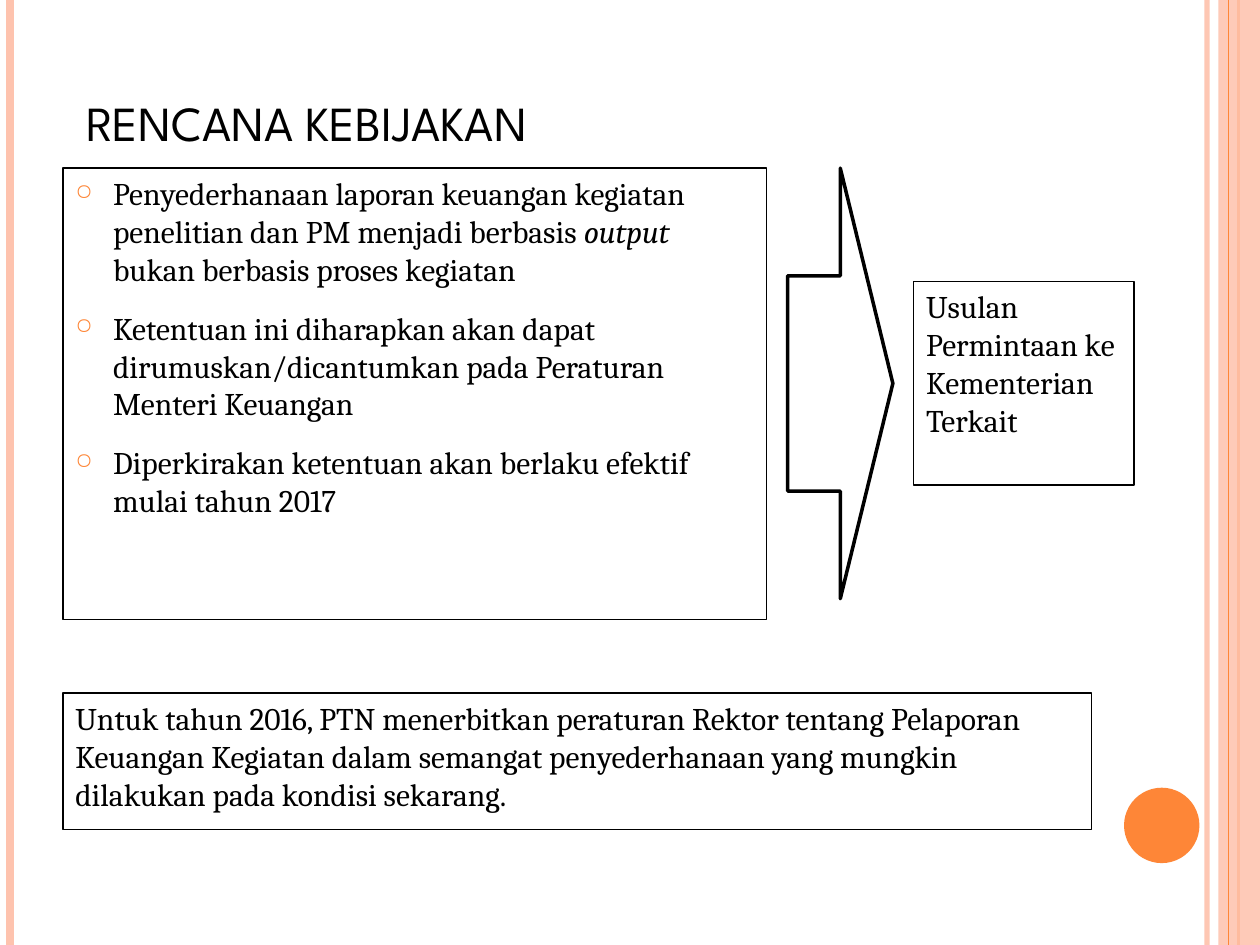
from dataclasses import dataclass

from lxml.etree import SubElement
from pptx import Presentation
from pptx.dml.color import RGBColor
from pptx.enum.shapes import MSO_CONNECTOR, MSO_SHAPE
from pptx.enum.text import MSO_ANCHOR, MSO_AUTO_SIZE, PP_ALIGN
from pptx.oxml.ns import qn
from pptx.util import Cm, Pt


@dataclass(frozen=True)
class Theme:
    ink: RGBColor = RGBColor(0x00, 0x00, 0x00)
    peach: RGBColor = RGBColor(0xFE, 0xC3, 0xAE)
    orange: RGBColor = RGBColor(0xFE, 0x86, 0x37)
    title_font: str = "League Spartan"
    body_font: str = "Cambria"
    title_size: Pt = Pt(28)
    body_size: Pt = Pt(18)
    spacing: Pt = Pt(6)
    box_line: Pt = Pt(0.75)
    arrow_line: Pt = Pt(2)


THEME = Theme()
WIDTH, HEIGHT = 25.4, 19.05
LEFT = 1.27  # shared left edge of the boxes
TOP = 3.39  # shared top edge of the policy box and the arrow

# Each paragraph is a list of (text, italic) runs
POLICIES = [
    [("Penyederhanaan laporan keuangan kegiatan penelitian dan PM menjadi berbasis ", False),
     ("output ", True),
     ("bukan berbasis proses kegiatan", False)],
    [("Ketentuan ini diharapkan akan dapat dirumuskan/dicantumkan pada "
      "Peraturan Menteri Keuangan", False)],
    [("Diperkirakan ketentuan akan berlaku efektif mulai tahun 2017", False)],
]
PROPOSAL = [[("Usulan Permintaan ke Kementerian Terkait", False)]]
REGULATION = [[("Untuk tahun 2016, PTN menerbitkan peraturan Rektor tentang Pelaporan "
                "Keuangan Kegiatan dalam semangat penyederhanaan yang mungkin dilakukan "
                "pada kondisi sekarang.", False)]]


def set_alpha(properties, percent):
    color = next(properties.iter(qn("a:srgbClr")))
    SubElement(color, qn("a:alpha"), val=str(percent * 1000))


def add_stripe(slide, x, color, weight, alpha=None):
    stripe = slide.shapes.add_connector(
        MSO_CONNECTOR.STRAIGHT, Cm(x), Cm(0), Cm(x), Cm(HEIGHT))
    stripe.line.color.rgb = color
    stripe.line.width = Pt(weight)
    properties = stripe._element.spPr
    SubElement(properties, qn("a:effectLst"))
    if alpha:
        set_alpha(properties, alpha)


def add_figure(slide, kind, bounds, fill=None, weight=None):
    figure = slide.shapes.add_shape(kind, *(Cm(value) for value in bounds))
    figure.shadow.inherit = False
    if fill is None:
        figure.fill.background()
    else:
        figure.fill.solid()
        figure.fill.fore_color.rgb = fill
    if weight is None:
        figure.line.fill.background()
    else:
        figure.line.color.rgb = THEME.ink
        figure.line.width = weight
    return figure


def add_run(paragraph, text, font, size, italic=False):
    run = paragraph.add_run()
    run.text = text
    run.font.name = font
    run.font.size = size
    run.font.italic = italic
    run.font.color.rgb = THEME.ink


def add_bullet(paragraph):
    properties = paragraph._p.get_or_add_pPr()
    indent = Cm(0.76)
    properties.set("marL", str(indent))
    properties.set("indent", str(-indent))
    color = SubElement(properties, qn("a:buClr"))
    SubElement(color, qn("a:srgbClr"), val=str(THEME.orange))
    SubElement(properties, qn("a:buSzPct"), val="70000")
    SubElement(properties, qn("a:buChar"), char="○")


def add_text_box(slide, bounds, paragraphs, bulleted=False, spacing=None):
    box = add_figure(slide, MSO_SHAPE.RECTANGLE, bounds, weight=THEME.box_line)
    frame = box.text_frame
    frame.word_wrap = True
    frame.vertical_anchor = MSO_ANCHOR.TOP
    for index, runs in enumerate(paragraphs):
        paragraph = frame.add_paragraph() if index else frame.paragraphs[0]
        paragraph.alignment = PP_ALIGN.LEFT
        if spacing is not None:
            paragraph.space_before = paragraph.space_after = spacing
        if bulleted:
            add_bullet(paragraph)
        for text, italic in runs:
            add_run(paragraph, text, THEME.body_font, THEME.body_size, italic)


def set_title(slide, text):
    title = slide.shapes.title
    title.left, title.top, title.width, title.height = Cm(1.48), Cm(1.73), Cm(22.43), Cm(1.45)
    frame = title.text_frame
    frame.word_wrap = True
    frame.auto_size = MSO_AUTO_SIZE.NONE
    frame.vertical_anchor = MSO_ANCHOR.TOP
    paragraph = frame.paragraphs[0]
    paragraph.alignment = PP_ALIGN.LEFT
    add_run(paragraph, text, THEME.title_font, THEME.title_size)


def add_decoration(slide):
    add_stripe(slide, 24.33, THEME.peach, 3, alpha=93)
    add_stripe(slide, 0.21, THEME.peach, 4.5)
    add_stripe(slide, 24.97, THEME.orange, 1.5)
    band_left = 24.56
    band = add_figure(slide, MSO_SHAPE.RECTANGLE,
                      (band_left, 0, WIDTH - band_left, HEIGHT), fill=THEME.peach)
    set_alpha(band._element.spPr, 87)
    add_stripe(slide, 24.77, THEME.orange, 0.75)
    add_figure(slide, MSO_SHAPE.OVAL, (22.66, 15.88, 1.52, 1.52), fill=THEME.orange)


def main():
    presentation = Presentation()
    presentation.slide_width, presentation.slide_height = Cm(WIDTH), Cm(HEIGHT)
    slide = presentation.slides.add_slide(presentation.slide_layouts.get_by_name("Title Only"))

    # Edge stripes and page disc
    add_decoration(slide)

    # Title and policy plan
    set_title(slide, "RENCANA KEBIJAKAN")
    add_text_box(slide, (LEFT, TOP, 14.18, 9.1), POLICIES,
                 bulleted=True, spacing=THEME.spacing)

    # Interim regulation
    add_text_box(slide, (LEFT, 13.97, 20.74, 2.75), REGULATION, spacing=THEME.spacing)

    # Arrow to the resulting proposal
    add_figure(slide, MSO_SHAPE.RIGHT_ARROW, (15.88, TOP, 2.12, 8.68),
               weight=THEME.arrow_line)
    add_text_box(slide, (18.42, 5.67, 4.44, 4.11), PROPOSAL)

    presentation.save("out.pptx")


if __name__ == "__main__":
    main()
